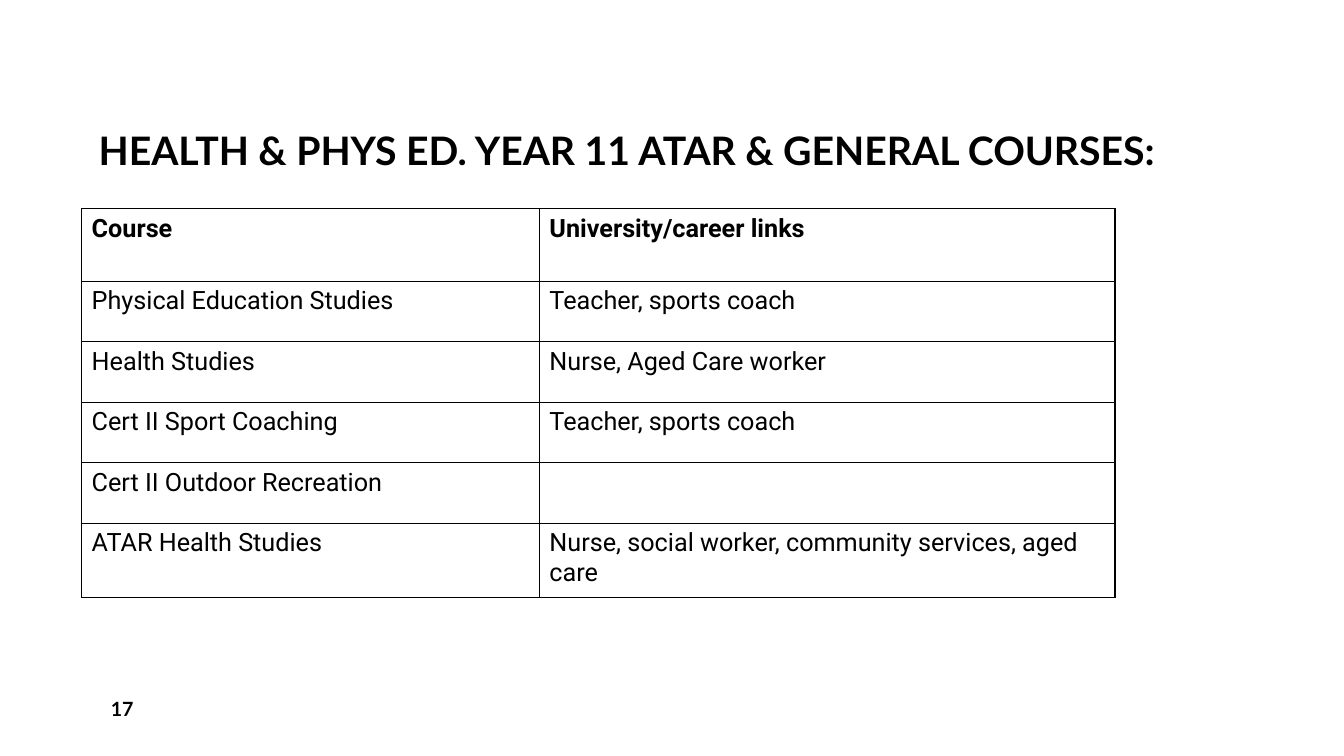
import lxml.etree
import pptx
import pptx.dml.color
import pptx.enum.text
import pptx.oxml
import pptx.oxml.ns
import pptx.util

TITLE = "HEALTH & PHYS ED. YEAR 11 ATAR & GENERAL COURSES:"
PAGE_NUMBER = "17"
COURSES = [
    ("Course", "University/career links"),
    ("Physical Education Studies", "Teacher, sports coach"),
    ("Health Studies", "Nurse, Aged Care worker"),
    ("Cert II Sport Coaching", "Teacher, sports coach"),
    ("Cert II Outdoor Recreation", ""),
    ("ATAR Health Studies", "Nurse, social worker, community services, aged care"),
]

SLIDE_SIZE = (13.33, 7.5)
TITLE_BOX = (0.88, 0.32, 10.72, 1.45)
PAGE_NUMBER_BOX = (1, 6.83, 2.92, 0.4)
TABLE_CORNER = (0.81, 2.07)
COLUMN_WIDTHS = (4.54, 5.71)
HEADER_HEIGHT, COURSE_HEIGHT, LAST_HEIGHT = 0.72, 0.6, 0.74
ROW_HEIGHTS = [HEADER_HEIGHT] + [COURSE_HEIGHT] * (len(COURSES) - 2) + [LAST_HEIGHT]

BLACK, WHITE = "000000", "FFFFFF"
TITLE_FONT = {"name": "Lato", "size": pptx.util.Pt(28), "bold": True}
PAGE_NUMBER_FONT = {"name": "Lato", "size": pptx.util.Pt(14), "bold": True}
HEADER_FONT = {"name": "Roboto", "size": pptx.util.Pt(18), "bold": True}
COURSE_FONT = {**HEADER_FONT, "bold": False}


def color(hex_value):
    return pptx.dml.color.RGBColor.from_string(hex_value)


def inches(lengths):
    return [pptx.util.Inches(length) for length in lengths]


def write(frame, text, font_format):
    paragraph = frame.paragraphs[0]
    if text:
        run = paragraph.add_run()
        run.text = text
        font = run.font
    else:
        font = paragraph.font
    for attribute, value in font_format.items():
        setattr(font, attribute, value)
    font.color.rgb = color(BLACK)
    return paragraph


def add_text(slide, box, text, font_format, anchor):
    frame = slide.shapes.add_textbox(*inches(box)).text_frame
    frame.word_wrap = True
    frame.vertical_anchor = anchor
    return write(frame, text, font_format)


def outline(cell):
    """Draw a one-point black border on all four sides of the cell."""
    properties = cell._tc.get_or_add_tcPr()
    for position, side in enumerate("LRTB"):
        border = pptx.oxml.parse_xml(
            f'<a:ln{side} {pptx.oxml.ns.nsdecls("a")} w="12700"><a:solidFill>'
            f'<a:srgbClr val="{BLACK}"/></a:solidFill></a:ln{side}>')
        properties.insert(position, border)


def add_course_table(slide):
    size = (sum(COLUMN_WIDTHS), sum(ROW_HEIGHTS))
    table = slide.shapes.add_table(
        len(COURSES), len(COLUMN_WIDTHS), *inches(TABLE_CORNER + size)).table
    table.first_row = table.horz_banding = False
    for column, width in zip(table.columns, inches(COLUMN_WIDTHS)):
        column.width = width
    for row, height in zip(table.rows, inches(ROW_HEIGHTS)):
        row.height = height
    for row_index, course in enumerate(COURSES):
        for column_index, text in enumerate(course):
            cell = table.cell(row_index, column_index)
            cell.fill.solid()
            cell.fill.fore_color.rgb = color(WHITE)
            outline(cell)
            write(cell.text_frame, text, COURSE_FONT if row_index else HEADER_FONT)


def main():
    presentation = pptx.Presentation()
    presentation.slide_width, presentation.slide_height = inches(SLIDE_SIZE)
    slide = presentation.slides.add_slide(presentation.slide_layouts[6])
    anchors = pptx.enum.text.MSO_ANCHOR
    title = add_text(slide, TITLE_BOX, TITLE, TITLE_FONT, anchors.BOTTOM)
    title.line_spacing = 0.9
    add_text(slide, PAGE_NUMBER_BOX, PAGE_NUMBER, PAGE_NUMBER_FONT, anchors.MIDDLE)
    add_course_table(slide)
    presentation.save("out.pptx")


if __name__ == "__main__":
    main()
